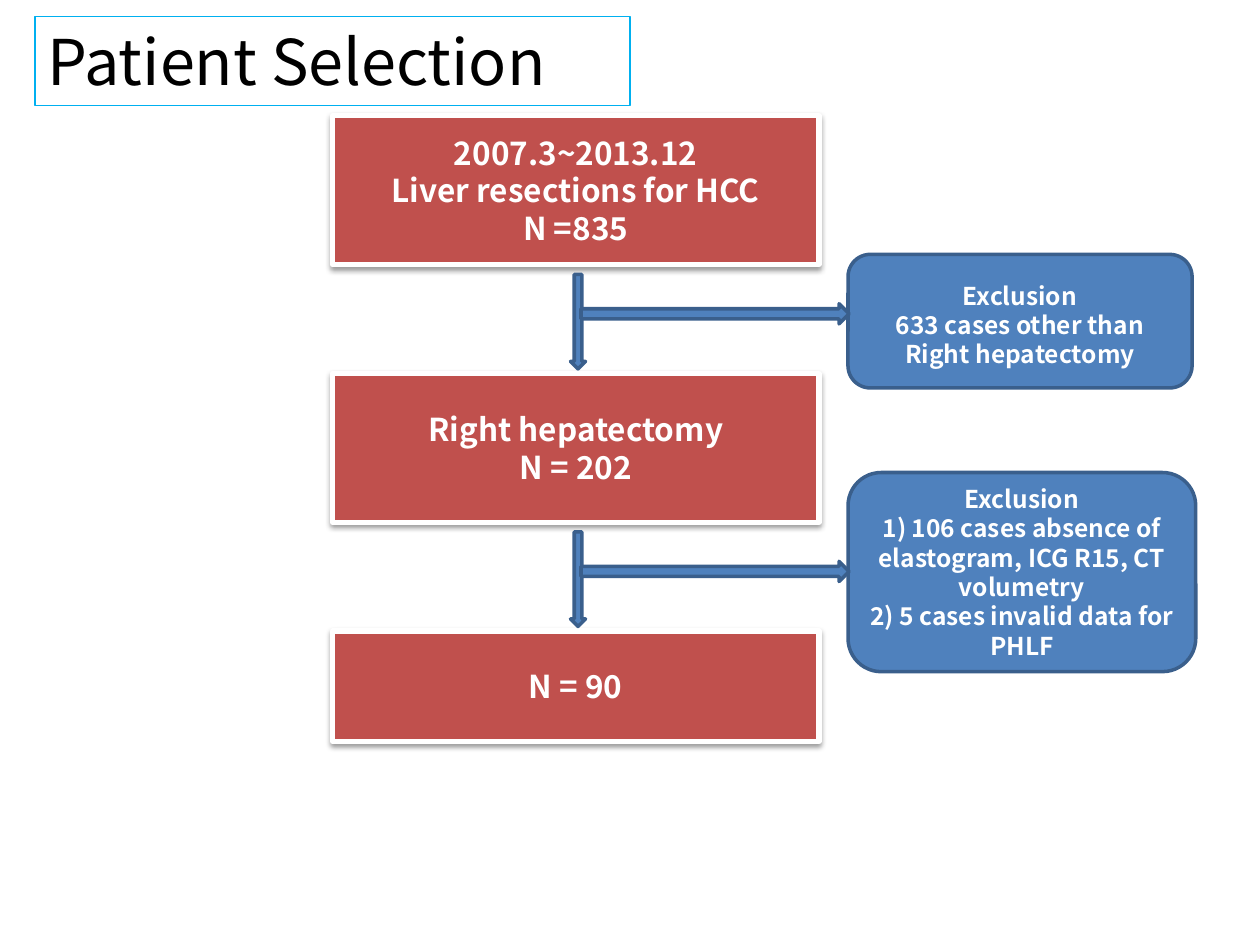
from lxml import etree
from pptx import Presentation
from pptx.dml.color import RGBColor
from pptx.enum.shapes import MSO_SHAPE as SHAPE
from pptx.enum.text import MSO_ANCHOR as ANCHOR, MSO_AUTO_SIZE as FIT, PP_ALIGN as ALIGN
from pptx.oxml.ns import qn
from pptx.util import Pt


def rgb(value):
    return RGBColor.from_string(value)


def add_part(kind, left, top, width, height, fill, line, weight, lines=(), size=18):
    part = slide.shapes.add_shape(kind, Pt(left), Pt(top), Pt(width), Pt(height))
    part.shadow.inherit = False
    part.fill.solid()
    part.fill.fore_color.rgb = rgb(fill)
    part.line.color.rgb = rgb(line)
    part.line.width = Pt(weight)
    frame = part.text_frame
    frame.word_wrap = True
    frame.vertical_anchor = ANCHOR.MIDDLE
    for i, line_text in enumerate(lines):
        paragraph = frame.paragraphs[0] if i == 0 else frame.add_paragraph()
        paragraph.text = line_text
        paragraph.alignment = ALIGN.CENTER
        paragraph.font.name = "Noto Sans CJK KR"
        paragraph.font.size = Pt(size)
        paragraph.font.bold = True
        paragraph.font.color.rgb = rgb("FFFFFF")
    return part


prs = Presentation()
prs.slide_width, prs.slide_height = Pt(720), Pt(540)
slide = prs.slides.add_slide(prs.slide_layouts[5])

# Title
title = slide.shapes.title
title.left, title.top, title.width, title.height = Pt(20), Pt(9.4), Pt(340), Pt(51)
title.line.color.rgb = rgb("00B0F0")
title.line.width = Pt(0.75)
title.text_frame.text = "Patient Selection"
title.text_frame.vertical_anchor = ANCHOR.TOP
title.text_frame.auto_size = FIT.NONE
heading = title.text_frame.paragraphs[0]
heading.alignment = ALIGN.LEFT
heading.font.name = "Noto Sans CJK SC"
heading.font.size = Pt(36)
heading.font.color.rgb = rgb("000000")

STEP = 147.2
BLUE = ("4F81BD", "3A5F8C", 2)

# Patient groups, from top to bottom
groups = [
    (85, ["2007.3~2013.12", "Liver resections for HCC", "N =835"]),
    (85, ["Right hepatectomy", "N = 202"]),
    (63, ["N = 90"]),
]
for row, (height, lines) in enumerate(groups):
    group = add_part(SHAPE.RECTANGLE, 190, 66.2 + row * STEP, 278, height,
                     "C0504D", "FFFFFF", 3, lines)
    effects = group._element.spPr.find(qn("a:effectLst"))
    shadow = etree.SubElement(effects, qn("a:outerShdw"), blurRad=str(Pt(3.1)),
                              dist=str(Pt(1.6)), dir="5400000", rotWithShape="0")
    shade = etree.SubElement(shadow, qn("a:srgbClr"), val="000000")
    etree.SubElement(shade, qn("a:alpha"), val="38000")

# Exclusions
exclusions = [
    (145.4, 196.6, 76.3, 4, ["Exclusion", "633 cases other than Right hepatectomy"]),
    (270, 198.7, 113.8, 0, ["Exclusion",
                            "1) 106 cases absence of elastogram, ICG R15, CT volumetry",
                            "2) 5 cases invalid data for PHLF"]),
]
for top, width, height, drop, lines in exclusions:
    exclusion = add_part(SHAPE.ROUNDED_RECTANGLE, 484.6, top, width, height, *BLUE, lines, 14)
    exclusion.text_frame.margin_top = Pt(3.6 + drop)

# Arrows down to the next group and across to the exclusion
for row in range(2):
    add_part(SHAPE.DOWN_ARROW, 326, 156.8 + row * STEP, 8.6, 54, *BLUE)
    add_part(SHAPE.RIGHT_ARROW, 332, 173.6 + row * STEP, 153.2, 11.5, *BLUE)

prs.save("out.pptx")
